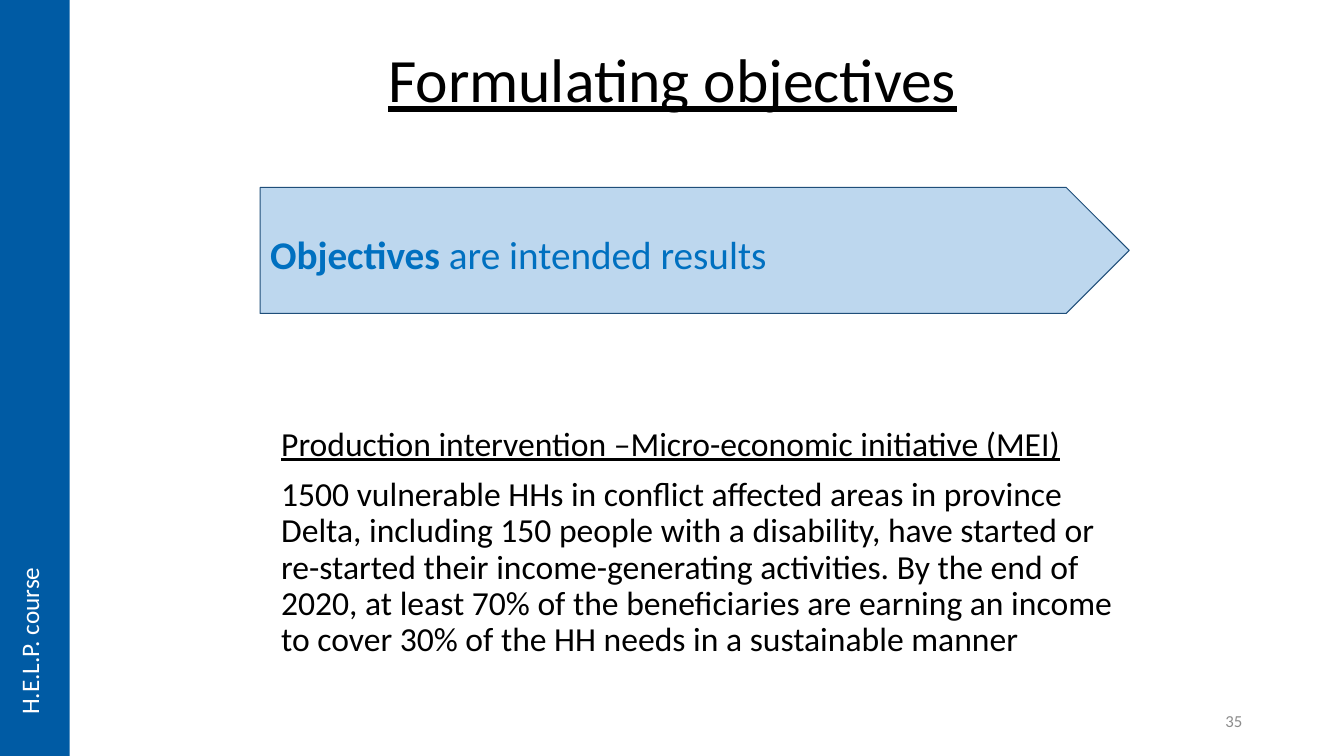
from pptx import Presentation
from pptx.dml.color import RGBColor
from pptx.enum.shapes import MSO_SHAPE
from pptx.enum.text import MSO_ANCHOR, PP_ALIGN
from pptx.util import Inches, Pt

COLORS = {
    "black": "000000",
    "white": "FFFFFF",
    "band": "005BA4",
    "arrow": "BDD7EE",
    "arrow_line": "1F4E79",
    "accent": "0070C0",
    "number": "8C8C8C",
}
FONT = "Calibri"


def rgb(name):
    return RGBColor.from_string(COLORS[name])


def format_run(r, size, color, bold=False, underline=False):
    r.font.name = FONT
    r.font.size = Pt(size)
    r.font.color.rgb = rgb(color)
    r.font.bold = bold
    r.font.underline = underline


def add_filled(s, kind, box, fill):
    sp = s.shapes.add_shape(kind, *map(Inches, box))
    sp.shadow.inherit = False
    sp.fill.solid()
    sp.fill.fore_color.rgb = rgb(fill)
    sp.line.fill.background()
    return sp


def add_text(s, box, text, size, color):
    sp = s.shapes.add_textbox(*map(Inches, box))
    tf = sp.text_frame
    tf.word_wrap = True
    tf.text = text
    for p in tf.paragraphs:
        format_run(p.runs[0], size, color)
    return sp


def add_title(s, box):
    sp = s.shapes.title
    sp.left, sp.top, sp.width, sp.height = map(Inches, box)
    tf = sp.text_frame
    tf.text = "Formulating objectives"
    tf.vertical_anchor = MSO_ANCHOR.MIDDLE
    p = tf.paragraphs[0]
    p.alignment = PP_ALIGN.CENTER
    p.line_spacing = 0.9
    format_run(p.runs[0], 44, "black", underline=True)


def add_definition(s, box):
    sp = add_filled(s, MSO_SHAPE.PENTAGON, box, "arrow")
    sp.line.color.rgb = rgb("arrow_line")
    sp.line.width = Pt(0.75)
    tf = sp.text_frame
    tf.vertical_anchor = MSO_ANCHOR.TOP
    tf.margin_top = Inches(0.48)
    p = tf.paragraphs[0]
    p.alignment = PP_ALIGN.LEFT
    p.line_spacing = 0.9
    for text, bold in (("Objectives ", True), ("are intended results", False)):
        r = p.add_run()
        r.text = text
        format_run(r, 28, "accent", bold=bold)


def add_example(s, box):
    text = (
        "Production intervention –Micro-economic initiative (MEI)\n"
        "1500 vulnerable HHs in conflict affected areas in province Delta, "
        "including 150 people with a disability, have started or re-started "
        "their income-generating activities. By the end of 2020, at least 70% "
        "of the beneficiaries are earning an income to cover 30% of the HH "
        "needs in a sustainable manner"
    )
    heading, body = add_text(s, box, text, 24, "black").text_frame.paragraphs
    heading.line_spacing = body.line_spacing = 0.9
    heading.runs[0].font.underline = True
    body.space_before = Pt(10)


def add_side_band(s, box):
    left, top, width, height = box
    add_filled(s, MSO_SHAPE.RECTANGLE, box, "band")
    label_box = (left + 0.09, top + height - 1.89, 0.5, 1.58)
    sp = add_text(s, label_box, "H.E.L.P. course", 18, "white")
    sp.text_frame.word_wrap = False
    sp.element.txBody.bodyPr.set("vert", "vert270")


def add_page_number(s, box):
    tf = add_text(s, box, "35", 12, "number").text_frame
    tf.vertical_anchor = MSO_ANCHOR.MIDDLE
    tf.paragraphs[0].alignment = PP_ALIGN.RIGHT


def main():
    prs = Presentation()
    prs.slide_width = Inches(13.33)
    prs.slide_height = Inches(7.5)
    s = prs.slides.add_slide(prs.slide_layouts[5])
    add_title(s, (2.17, 0.3, 9, 1.04))
    add_example(s, (2.69, 4.19, 8.65, 2.58))
    add_definition(s, (2.58, 1.86, 8.62, 1.25))
    add_side_band(s, (0, 0, 0.69, 7.5))
    add_page_number(s, (9.42, 6.95, 3, 0.4))
    prs.save("out.pptx")


if __name__ == "__main__":
    main()
